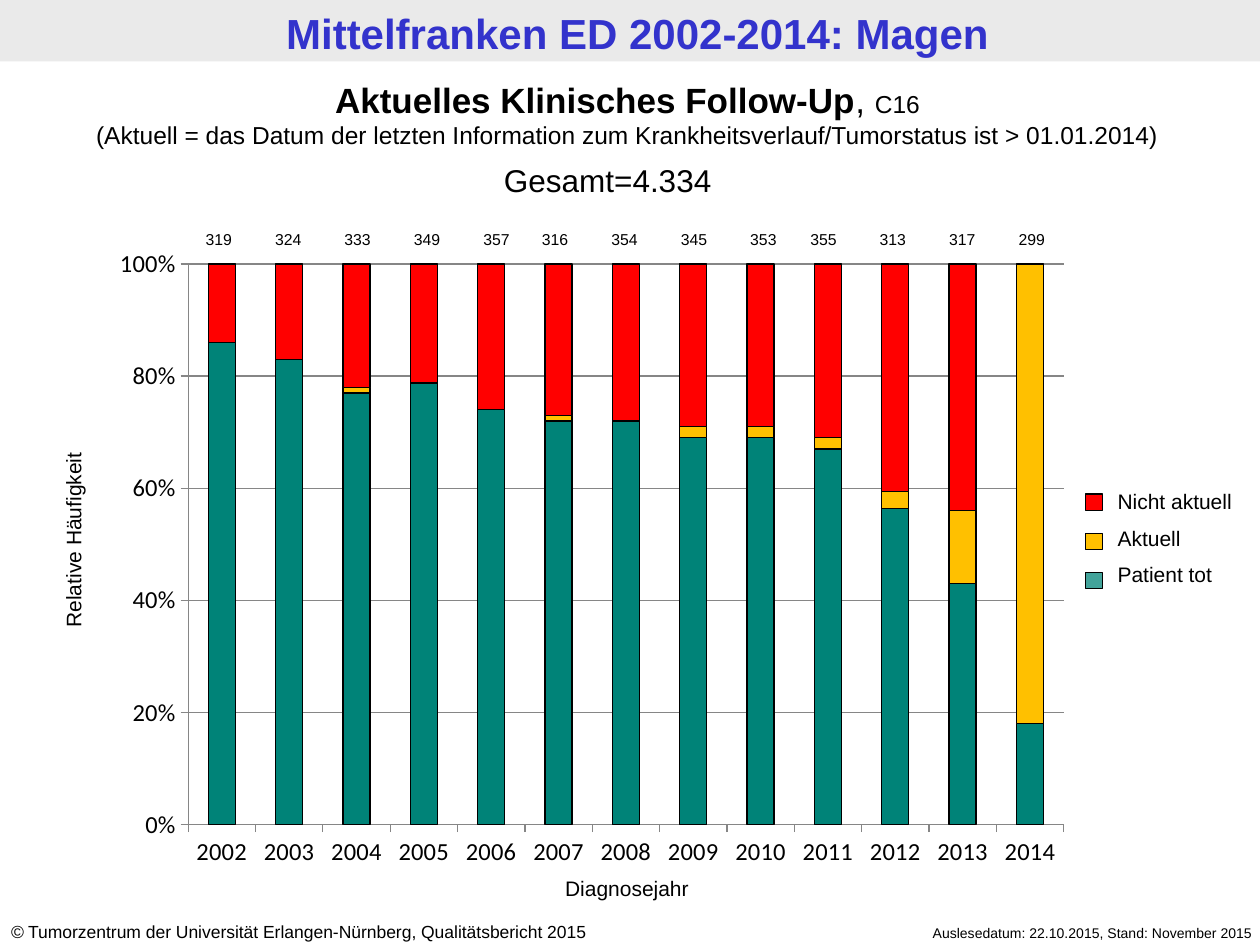
from lxml import etree
from pptx import Presentation
from pptx.chart.data import CategoryChartData
from pptx.dml.color import RGBColor
from pptx.enum.chart import XL_CHART_TYPE, XL_TICK_MARK
from pptx.enum.shapes import MSO_SHAPE
from pptx.enum.text import PP_ALIGN
from pptx.oxml.ns import qn
from pptx.util import Cm, Pt

LEFT, CENTER, RIGHT = PP_ALIGN.LEFT, PP_ALIGN.CENTER, PP_ALIGN.RIGHT
RECTANGLE = MSO_SHAPE.RECTANGLE
STACKED_100 = XL_CHART_TYPE.COLUMN_STACKED_100
OUTSIDE = XL_TICK_MARK.OUTSIDE

BLACK, GREY = "000000", "868686"
TEAL, YELLOW, RED = "008378", "FFC000", "FF0000"

YEARS = [str(year) for year in range(2002, 2015)]
STATUS_SHARES = [
    ("Patient tot", TEAL, (86, 83, 77, 78, 74, 72, 72, 69, 69, 67, 57, 43, 18)),
    ("Aktuell", YELLOW, (0, 0, 1, 0, 0, 1, 0, 2, 2, 2, 3, 13, 82)),
    ("Nicht aktuell", RED, (14, 17, 22, 21, 26, 27, 28, 29, 29, 31, 41, 44, 0)),
]
# Each group of case counts starts at its own left edge
CASE_COUNTS = [
    (3.71, (319, 324, 333, 349, 357)),
    (10.49, (316, 354, 345, 353)),
    (15.9, (355, 313, 317, 299)),
]
COUNT_STEP = 1.4
LEGEND_STEP = 0.79


def color(hex_string):
    return RGBColor.from_string(hex_string)


def run(paragraph, text, size=12, fill=BLACK, bold=False, italic=False):
    part = paragraph.add_run()
    part.text = text
    part.font.name = "Arial"
    part.font.size = Pt(size)
    part.font.bold = bold
    part.font.italic = italic
    part.font.color.rgb = color(fill)


class SlideBuilder:
    """Holds the slide and the shared style of its elements."""

    def __init__(self, slide):
        self.shapes = slide.shapes
        self.line_width = Pt(0.75)

    def text(self, box, *paragraphs, align=LEFT, gap=0, rotation=0):
        """Each paragraph is a list of (text, format) pairs."""
        holder = self.shapes.add_textbox(*map(Cm, box))
        holder.rotation = rotation
        frame = holder.text_frame
        frame.word_wrap = True
        for index, parts in enumerate(paragraphs):
            paragraph = frame.add_paragraph() if index else frame.paragraphs[0]
            paragraph.alignment = align
            if index and gap:
                paragraph.space_before = Pt(gap)
            for words, style in parts:
                run(paragraph, words, **style)

    def rectangle(self, box, fill, outline=None, opacity=None):
        shape = self.shapes.add_shape(RECTANGLE, *map(Cm, box))
        shape.shadow.inherit = False
        shape.fill.solid()
        shape.fill.fore_color.rgb = color(fill)
        if opacity:
            rgb = shape.fill._xPr.find(".//" + qn("a:srgbClr"))
            etree.SubElement(rgb, qn("a:alpha"), val=str(opacity * 1000))
        if outline:
            self.outline(shape, outline)
        else:
            shape.line.fill.background()

    def outline(self, element, stroke):
        element.line.color.rgb = color(stroke)
        element.line.width = self.line_width

    def stacked_chart(self, box, categories, series_list, plot_box):
        data = CategoryChartData(number_format="0")
        data.categories = categories
        for name, _, values in series_list:
            data.add_series(name, values)
        chart = self.shapes.add_chart(STACKED_100, *map(Cm, box), data).chart
        chart.has_legend = False
        chart.has_title = False
        chart.font.name = "Calibri"
        chart.font.size = Pt(18)
        chart.font.color.rgb = color(BLACK)

        plot = chart.plots[0]
        plot.gap_width = 150
        plot.overlap = 100
        plot.vary_by_categories = False
        for series, (_, fill, _) in zip(plot.series, series_list):
            series.format.fill.solid()
            series.format.fill.fore_color.rgb = color(fill)
            self.outline(series.format, BLACK)

        shares = chart.value_axis
        shares.minimum_scale, shares.maximum_scale = 0, 1
        shares.major_unit = 0.2
        shares.tick_labels.number_format = "0%"
        shares.tick_labels.number_format_is_linked = False
        shares.has_major_gridlines = True
        self.outline(shares.major_gridlines.format, GREY)
        for axis in (chart.category_axis, shares):
            axis.major_tick_mark = OUTSIDE
            axis.tick_labels.font.size = Pt(14)
            self.outline(axis.format, GREY)
        self.place_plot(chart, plot_box)

    def place_plot(self, chart, plot_box):
        """Fix the inner plot area, given as fractions of the chart."""
        area = chart._chartSpace.find(".//" + qn("c:plotArea"))
        layout = area.find(qn("c:layout"))
        if layout is None:
            layout = etree.Element(qn("c:layout"))
            area.insert(0, layout)
        manual = etree.SubElement(layout, qn("c:manualLayout"))
        settings = [("layoutTarget", "inner"), ("xMode", "edge"), ("yMode", "edge")]
        settings += zip("xywh", map(str, plot_box))
        for tag, value in settings:
            etree.SubElement(manual, qn("c:" + tag), val=value)


def main():
    presentation = Presentation()
    presentation.slide_width, presentation.slide_height = Cm(25.4), Cm(19.05)
    page = SlideBuilder(presentation.slides.add_slide(presentation.slide_layouts[6]))

    page.rectangle((0, 0, 25.4, 1.24), "EAEAEA")
    title_style = dict(size=24, fill="3333CC", bold=True)
    page.text((0.15, 0.03, 25.4, 1.24),
              [("Mittelfranken ED 2002-2014: Magen", title_style)], align=CENTER)
    page.text((16.89, 18.52, 8.61, 0.61),
              [("Auslesedatum: 22.10.2015, Stand: November 2015", dict(size=8))],
              align=RIGHT)
    page.text((-0.03, 18.44, 13.31, 0.69),
              [("©", dict(size=10, italic=True)),
               (" Tumorzentrum der Universität Erlangen-Nürnberg, "
                "Qualitätsbericht 2015", dict(size=10))])

    page.stacked_chart((2.01, 4.75, 19.81, 12.98), YEARS, STATUS_SHARES,
                       plot_box=(0.09, 0.044, 0.891, 0.871))
    page.text((-1.57, 10.49, 6.12, 0.79), [("Relative Häufigkeit", {})],
              align=CENTER, rotation=270)
    page.text((9.78, 17.53, 5.72, 0.79), [("Diagnosejahr", {})], align=CENTER)

    legend = STATUS_SHARES[::-1]
    page.text((22.28, 9.73, 3.61, 2.31),
              *[[(name, {})] for name, _, _ in legend], gap=6.5)
    for row, (_, fill, _) in enumerate(legend):
        page.rectangle((21.89, 9.96 + row * LEGEND_STEP, 0.33, 0.33), fill,
                       outline=BLACK, opacity=74 if fill == TEAL else None)

    for start, counts in CASE_COUNTS:
        for index, count in enumerate(counts):
            page.text((start + index * COUNT_STEP, 4.5, COUNT_STEP, 0.64),
                      [(str(count), dict(size=9))], align=CENTER)

    page.text((-0.1, 1.45, 25.5, 1.7),
              [("Aktuelles Klinisches Follow-Up", dict(size=20, bold=True)),
               (", ", dict(size=20)), ("C16", dict(size=14))],
              [("(Aktuell = das Datum der letzten Information zum "
                "Krankheitsverlauf/Tumorstatus ist > 01.01.2014)", dict(size=14))],
              align=CENTER)
    page.text((9.91, 3.12, 5.59, 1.02), [("Gesamt=4.334", dict(size=18))])

    presentation.save("out.pptx")


if __name__ == "__main__":
    main()
